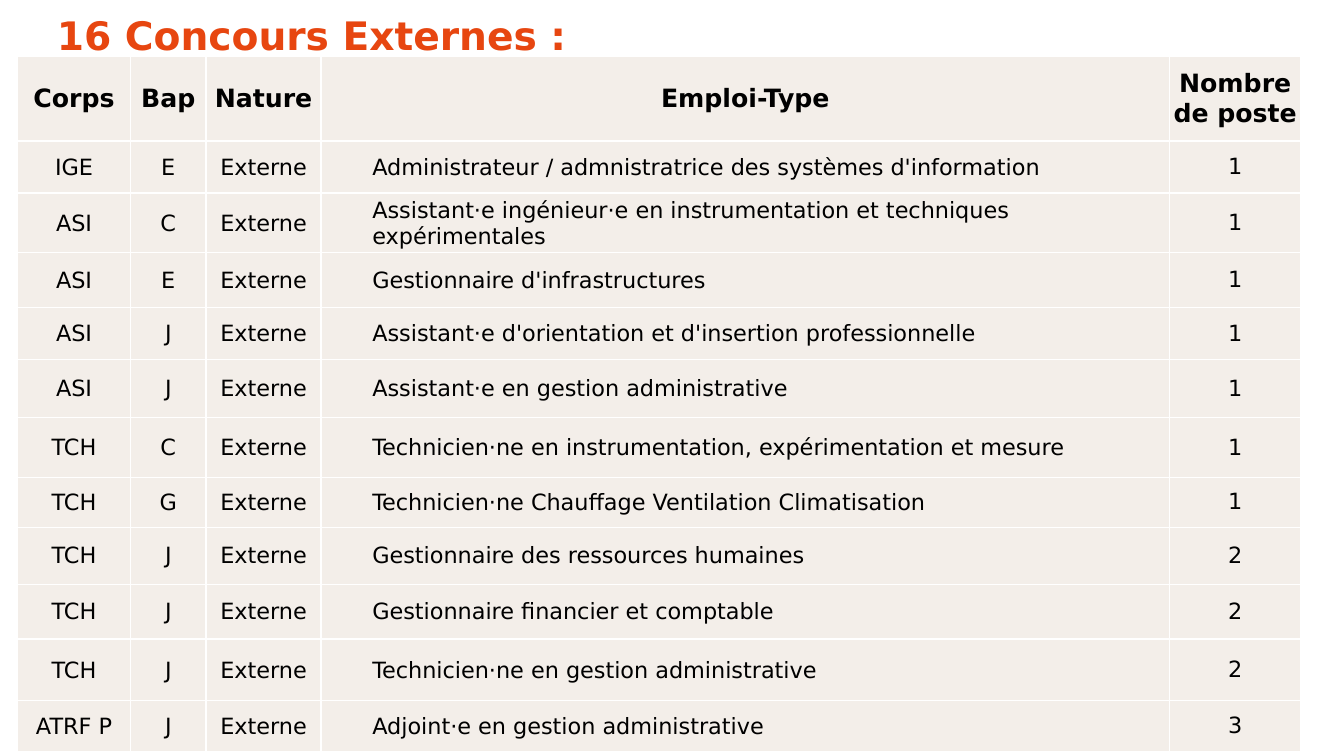
import pptx
import pptx.dml.color
import pptx.enum.text
import pptx.oxml
import pptx.oxml.ns
import pptx.util

Pt = pptx.util.Pt
ALIGN = pptx.enum.text.PP_ALIGN
MIDDLE = pptx.enum.text.MSO_ANCHOR.MIDDLE

FONT = "DejaVu Sans"
COL_WIDTHS = [80.6, 54, 82.1, 606.2, 93.6]
ROW_HEIGHTS = [60.2, 37.2, 42.7, 39.1, 37.2, 41.2, 43, 35.5, 40.8, 39.1, 44.1, 36.2]
HEADERS = ["Corps", "Bap", "Nature", "Emploi-Type", "Nombre de poste"]
POSTS = [
    ("IGE", "E", "Administrateur / admnistratrice des systèmes d'information", 1),
    ("ASI", "C", "Assistant·e ingénieur·e en instrumentation et techniques expérimentales", 1),
    ("ASI", "E", "Gestionnaire d'infrastructures", 1),
    ("ASI", "J", "Assistant·e d'orientation et d'insertion professionnelle", 1),
    ("ASI", "J", "Assistant·e en gestion administrative", 1),
    ("TCH", "C", "Technicien·ne en instrumentation, expérimentation et mesure", 1),
    ("TCH", "G", "Technicien·ne Chauffage Ventilation Climatisation", 1),
    ("TCH", "J", "Gestionnaire des ressources humaines", 2),
    ("TCH", "J", "Gestionnaire financier et comptable", 2),
    ("TCH", "J", "Technicien·ne en gestion administrative", 2),
    ("ATRF P", "J", "Adjoint·e en gestion administrative", 3),
]


def rgb(color):
    return pptx.dml.color.RGBColor.from_string(color)


def add_run(p, text, size, color, bold=False):
    r = p.add_run()
    r.text = text
    r.font.name = FONT
    r.font.size = Pt(size)
    r.font.bold = bold
    r.font.color.rgb = rgb(color)


def set_margins(target, left, top, right, bottom):
    target.margin_left, target.margin_top = Pt(left), Pt(top)
    target.margin_right, target.margin_bottom = Pt(right), Pt(bottom)


def set_title(s, text):
    sp = s.shapes.title
    sp.left, sp.top, sp.width, sp.height = Pt(22.3), Pt(6.5), Pt(462.2), Pt(43.2)
    tf = sp.text_frame
    tf.word_wrap = True
    tf.auto_size = pptx.enum.text.MSO_AUTO_SIZE.NONE
    tf.vertical_anchor = MIDDLE
    set_margins(tf, 18.3, 3.6, 7.2, 3.6)
    p = tf.paragraphs[0]
    p.alignment = ALIGN.LEFT
    p.line_spacing = 0.8
    add_run(p, text, 28, "E74610", True)


def set_borders(cell, color, width):
    tcPr = cell._tc.get_or_add_tcPr()
    for side in ("lnL", "lnR", "lnT", "lnB"):
        tcPr.append(pptx.oxml.parse_xml(
            f'<a:{side} {pptx.oxml.ns.nsdecls("a")} w="{Pt(width)}">'
            f'<a:solidFill><a:srgbClr val="{color}"/></a:solidFill></a:{side}>'))


def fill_cell(cell, text, size, bold, inset, indented):
    set_borders(cell, "FFFFFF", 1)
    cell.fill.solid()
    cell.fill.fore_color.rgb = rgb("F3EEE9")
    cell.vertical_anchor = MIDDLE
    set_margins(cell, inset, inset, inset, 0)
    p = cell.text_frame.paragraphs[0]
    if indented:
        p.level = 1
        p.alignment = ALIGN.LEFT
        pPr = p._p.get_or_add_pPr()
        pPr.set("marL", str(Pt(36)))
        pPr.set("indent", "0")
    else:
        p.alignment = ALIGN.CENTER
    add_run(p, text, size, "000000", bold)


def add_posts_table(s):
    rows = [HEADERS] + [(corps, bap, "Externe", job, str(count))
                        for corps, bap, job, count in POSTS]
    frame = s.shapes.add_table(len(rows), len(HEADERS), Pt(12.6), Pt(40.5),
                               Pt(sum(COL_WIDTHS)), Pt(sum(ROW_HEIGHTS)))
    table = frame.table
    table.first_row = table.horz_banding = False
    for column, width in zip(table.columns, COL_WIDTHS):
        column.width = Pt(width)
    for row, height in zip(table.rows, ROW_HEIGHTS):
        row.height = Pt(height)
    for i, row in enumerate(rows):
        header = i == 0
        for j, text in enumerate(row):
            inset = 0 if header or j == 4 else 0.7
            fill_cell(table.cell(i, j), text, 18 if header else 16, header,
                      inset, j == 3 and not header)


def main():
    prs = pptx.Presentation()
    prs.slide_width, prs.slide_height = Pt(960), Pt(540)
    s = prs.slides.add_slide(prs.slide_layouts[5])
    set_title(s, "16 Concours Externes :")
    add_posts_table(s)
    prs.save("out.pptx")


if __name__ == "__main__":
    main()
